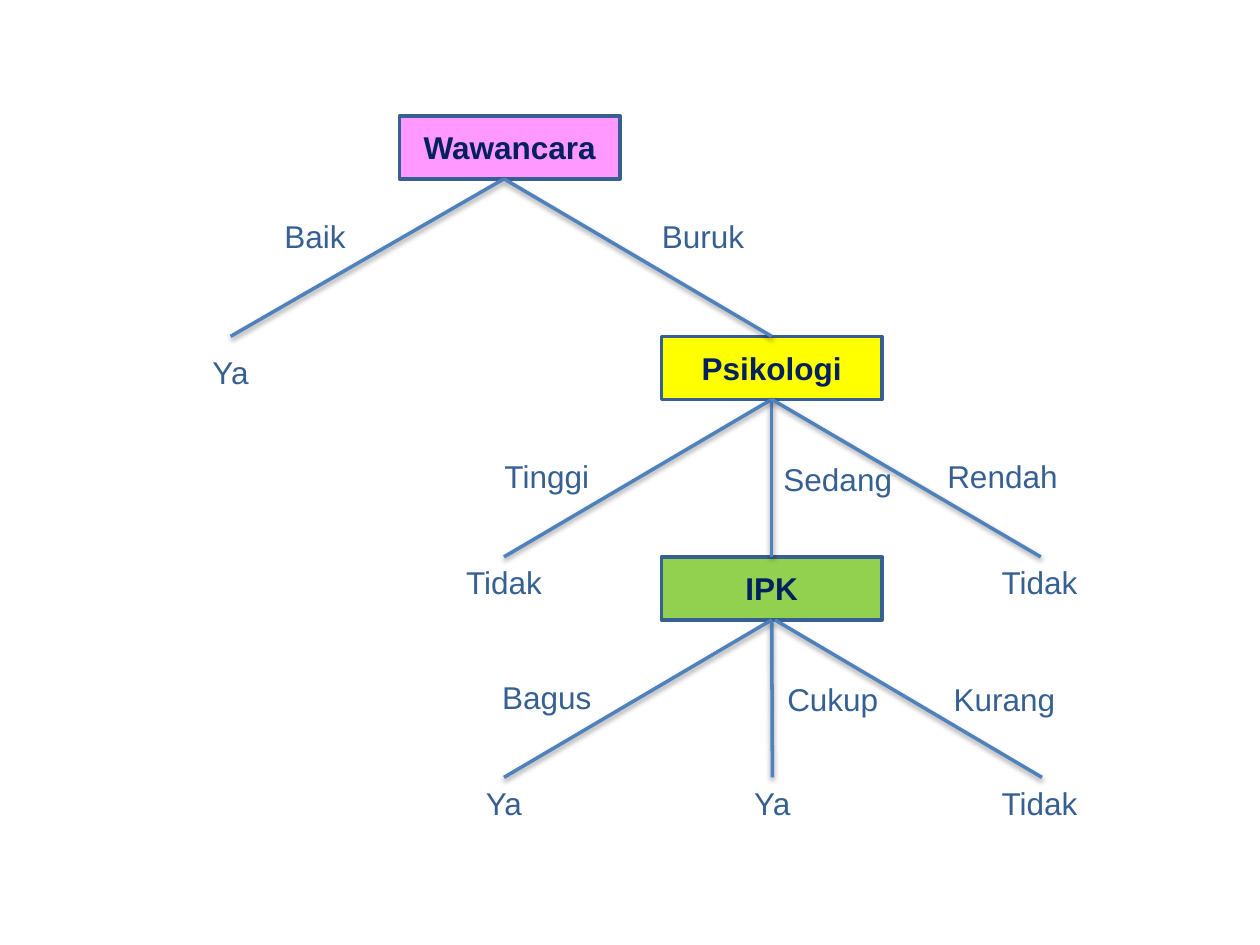
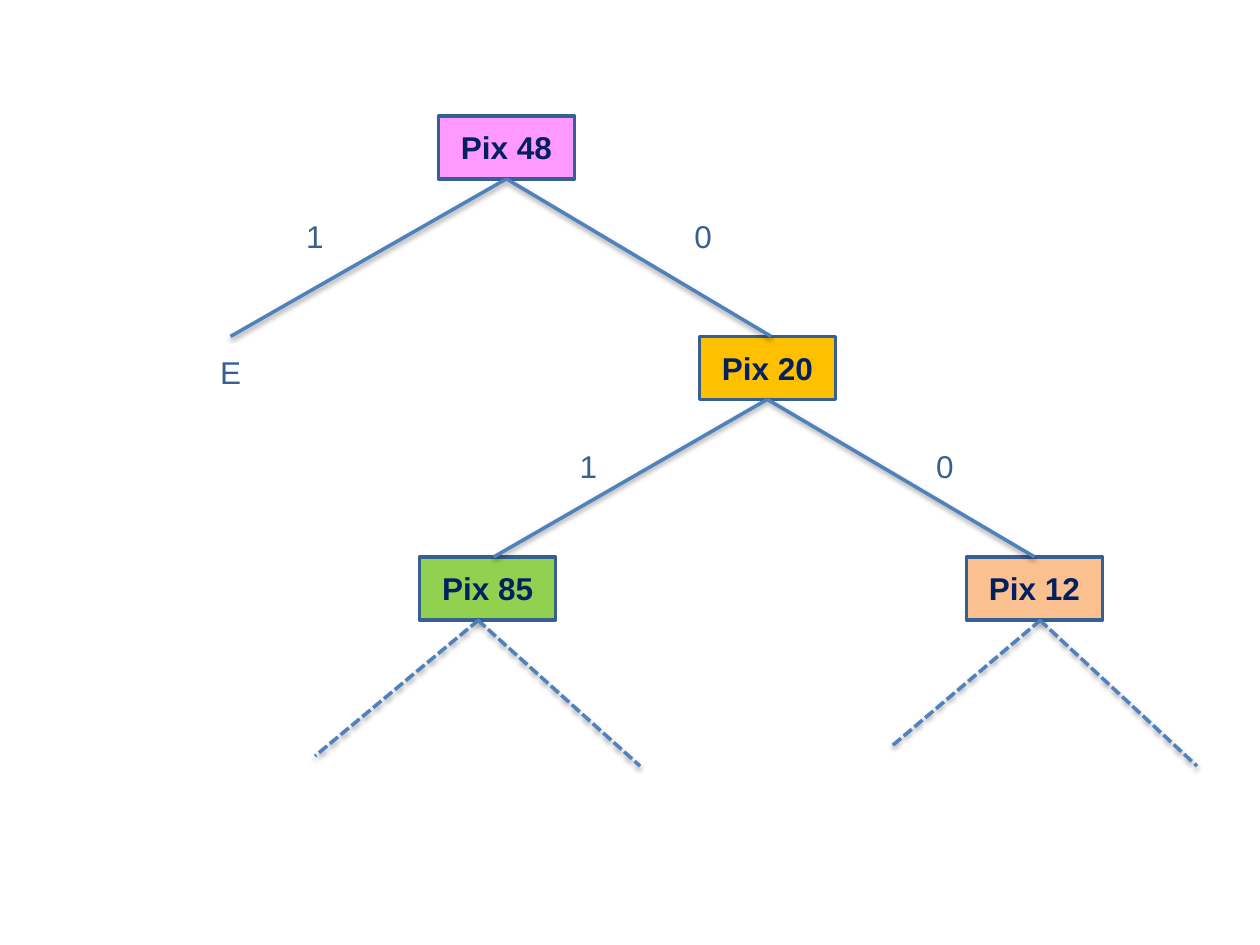
from lxml import etree
from pptx import Presentation
from pptx.dml.color import RGBColor
from pptx.enum import dml, shapes, text
from pptx.oxml.ns import qn
from pptx.util import Inches, Pt

# nodes: text, left, level, fill
# branches: level, x at node, x at end, drop, dashed
# centred / left_aligned labels: text, left, top
TREES = [
    {
        "node_width": 1.75,
        "nodes": [
            ("Wawancara", 3.17, 0, "FF99FF"),
            ("Psikologi", 5.25, 1, "FFFF00"),
            ("IPK", 5.25, 2, "92D050"),
        ],
        "branches": [
            (0, 4, 1.83, 1.25, False),
            (0, 4, 6.12, 1.25, False),
            (1, 6.12, 4, 1.25, False),
            (1, 6.13, 6.12, 1.25, False),
            (1, 6.13, 8.26, 1.25, False),
            (2, 6.12, 4, 1.25, False),
            (2, 6.13, 6.13, 1.25, False),
            (2, 6.15, 8.27, 1.25, False),
        ],
        "centred": [
            ("Baik", 2, 1.67), ("Buruk", 5.08, 1.67), ("Ya", 1.33, 2.75),
            ("Tinggi", 3.84, 3.58), ("Tidak", 3.5, 4.42), ("Tidak", 7.75, 4.42),
            ("Bagus", 3.84, 5.33), ("Ya", 3.5, 6.17), ("Ya", 5.63, 6.17),
            ("Tidak", 7.75, 6.17),
        ],
        "left_aligned": [
            ("Sedang", 6.12, 3.6), ("Rendah", 7.42, 3.58),
            ("Cukup", 6.15, 5.35), ("Kurang", 7.47, 5.35),
        ],
    },
    {
        "node_width": 1.08,
        "nodes": [
            ("Pix 48", 3.48, 0, "FF99FF"),
            ("Pix 20", 5.55, 1, "FFC000"),
            ("Pix 85", 3.33, 2, "92D050"),
            ("Pix 12", 7.67, 2, "FAC090"),
        ],
        "branches": [
            (0, 4, 1.83, 1.25, False),
            (0, 4, 6.12, 1.25, False),
            (1, 6.08, 3.92, 1.25, False),
            (1, 6.08, 8.21, 1.25, False),
            (2, 3.8, 2.5, 1.08, True),
            (2, 3.79, 5.08, 1.16, True),
            (2, 8.26, 7.08, 1, True),
            (2, 8.25, 9.5, 1.16, True),
        ],
        "centred": [
            ("1", 2, 1.67), ("0", 5.08, 1.67), ("E", 1.33, 2.75),
            ("1", 4.17, 3.5), ("0", 7, 3.5),
        ],
        "left_aligned": [],
    },
]

TOP, LEVEL_STEP, NODE_HEIGHT = 0.92, 1.75, 0.5
GLUE_DISTANCE = 0.02
BORDER, BRANCH = "376092", "4F81BD"
NODE_FONT = {"name": "Arial", "size": Pt(18), "bold": True}
LABEL_FONT = {"name": "Arial", "size": Pt(18)}
SHADOW = {"blurRad": "40000", "dist": "20000", "dir": "5400000", "rotWithShape": "0"}


def rgb(value):
    return RGBColor.from_string(value)


def level_top(level):
    return TOP + LEVEL_STEP * level


def write(tf, words, font, color, align):
    p = tf.paragraphs[0]
    p.alignment = align
    r = p.add_run()
    r.text = words
    for name, value in font.items():
        setattr(r.font, name, value)
    r.font.color.rgb = rgb(color)


def add_node(slide, words, left, level, width, fill):
    sp = slide.shapes.add_shape(
        shapes.MSO_SHAPE.FLOWCHART_PROCESS,
        *map(Inches, (left, level_top(level), width, NODE_HEIGHT)))
    sp.shadow.inherit = False
    sp.fill.solid()
    sp.fill.fore_color.rgb = rgb(fill)
    sp.line.color.rgb = rgb(BORDER)
    sp.line.width = Pt(2)
    sp.text_frame.vertical_anchor = text.MSO_ANCHOR.MIDDLE
    write(sp.text_frame, words, NODE_FONT, "002060", text.PP_ALIGN.CENTER)
    return sp


def add_label(slide, words, left, top, width, height, align):
    tf = slide.shapes.add_textbox(*map(Inches, (left, top, width, height))).text_frame
    tf.word_wrap = True
    tf.auto_size = text.MSO_AUTO_SIZE.SHAPE_TO_FIT_TEXT
    write(tf, words, LABEL_FONT, BORDER, align)


def add_shadow(line):
    effects = etree.SubElement(line._element.spPr, qn("a:effectLst"))
    shadow = etree.SubElement(effects, qn("a:outerShdw"), SHADOW)
    color = etree.SubElement(shadow, qn("a:srgbClr"), val="000000")
    etree.SubElement(color, qn("a:alpha"), val="38000")


def node_at(nodes, level, x):
    """Return the node of this level whose middle is at x, if any."""
    for node_level, middle, sp in nodes:
        if node_level == level and abs(middle - x) <= GLUE_DISTANCE:
            return sp
    return None


def add_branch(slide, nodes, level, start_x, end_x, drop, dashed):
    start_y = level_top(level) + NODE_HEIGHT
    line = slide.shapes.add_connector(
        shapes.MSO_CONNECTOR.STRAIGHT,
        *map(Inches, (start_x, start_y, end_x, start_y + drop)))
    line.line.color.rgb = rgb(BRANCH)
    line.line.width = Pt(2)
    if dashed:
        line.line.dash_style = dml.MSO_LINE.SQUARE_DOT
    add_shadow(line)
    parent = node_at(nodes, level, start_x)
    child = node_at(nodes, level + 1, end_x)
    if parent is not None:
        line.begin_connect(parent, 2)
    if child is not None:
        line.end_connect(child, 0)


def add_tree(slide, tree):
    width = tree["node_width"]
    nodes = [(level, left + width / 2, add_node(slide, words, left, level, width, fill))
             for words, left, level, fill in tree["nodes"]]
    for branch in tree["branches"]:
        add_branch(slide, nodes, *branch)
    for label in tree["centred"]:
        add_label(slide, *label, 1, 0.42, text.PP_ALIGN.CENTER)
    for label in tree["left_aligned"]:
        add_label(slide, *label, 1.33, 0.4, text.PP_ALIGN.LEFT)


def main():
    prs = Presentation()
    prs.slide_width, prs.slide_height = Inches(10), Inches(7.5)
    for tree in TREES:
        add_tree(prs.slides.add_slide(prs.slide_layouts[6]), tree)
    prs.save("out.pptx")


if __name__ == "__main__":
    main()
